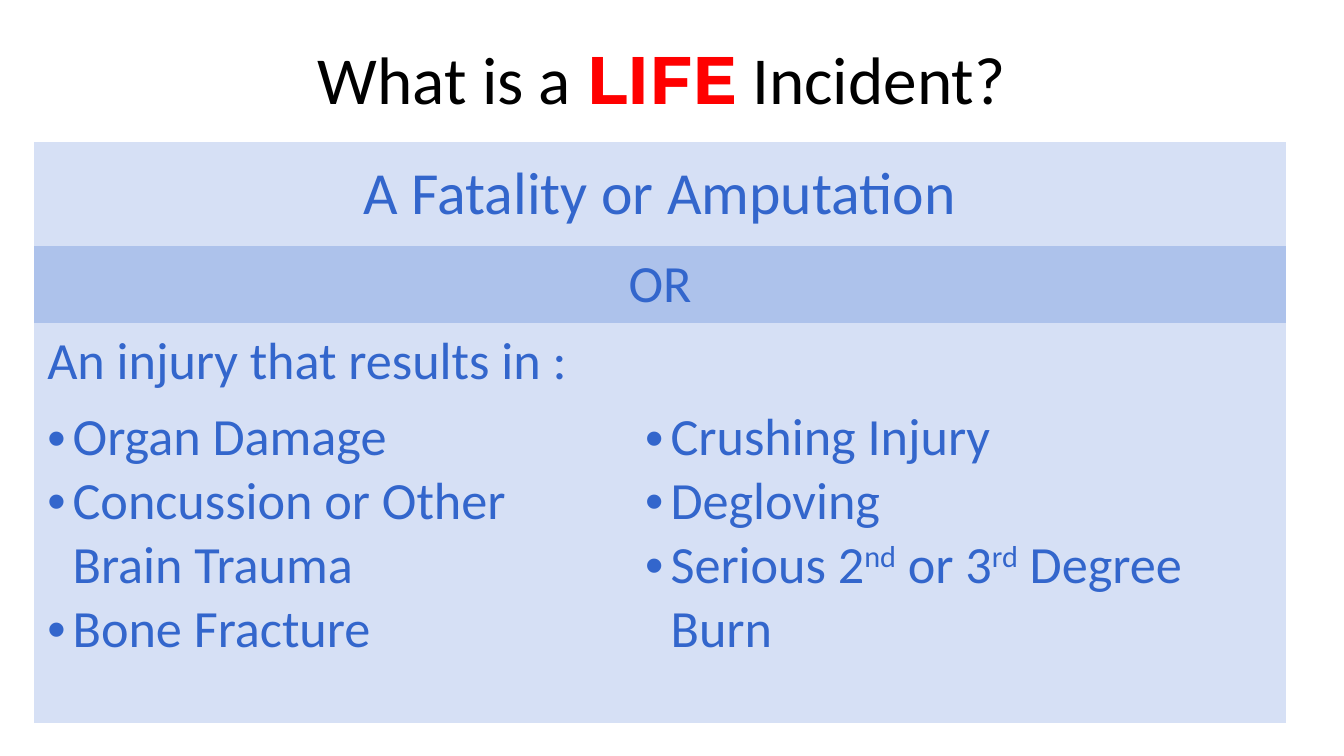
import pptx
import pptx.util
import pptx.dml.color
import pptx.enum.text
import pptx.oxml.ns
from lxml import etree

Cm = pptx.util.Cm
Pt = pptx.util.Pt
RGB = pptx.dml.color.RGBColor
Align = pptx.enum.text.PP_ALIGN
Anchor = pptx.enum.text.MSO_ANCHOR
qn = pptx.oxml.ns.qn

BLACK = RGB(0x00, 0x00, 0x00)
RED = RGB(0xFF, 0x00, 0x00)
BLUE = RGB(0x33, 0x66, 0xCC)
PALE = RGB(0xD6, 0xE0, 0xF5)
MID = RGB(0xAD, 0xC2, 0xEB)
PLAIN = "{2D5ABB26-0587-4C30-8999-92F81FD0307C}"

HEAD = {"name": "Calibri", "size": Pt(36), "bold": False}
LIFE = {"name": "Montserrat", "size": Pt(36), "bold": True}
BODY = {"name": "Calibri", "size": Pt(28), "bold": False}
LARGE = {"name": "Calibri", "size": Pt(32), "bold": False}

TITLE = [
    ("What is a ", HEAD, BLACK),
    ("LIFE", LIFE, RED),
    (" Incident?", HEAD, BLACK),
]
BANDS = [
    ("A Fatality or Amputation", LARGE, Align.CENTER, PALE),
    ("OR", BODY, Align.CENTER, MID),
    ("An injury that results in :", BODY, Align.LEFT, PALE),
]
LISTS = [
    [["Organ Damage"], ["Concussion or Other Brain Trauma"], ["Bone Fracture"]],
    [
        ["Crushing Injury"],
        ["Degloving"],
        ["Serious 2", "nd", " or 3", "rd", " Degree Burn"],
    ],
]
RAISED = {"nd", "rd"}
COLS = [11.3, 12.37]
ROWS = [1.96, 1.45, 1.45, 6.12]
INDENT = Cm(0.48)


def add_run(para, text, form, color):
    run = para.add_run()
    run.text = text
    for key, value in form.items():
        setattr(run.font, key, value)
    run.font.color.rgb = color
    if text in RAISED:
        run._r.get_or_add_rPr().set("baseline", "30000")


def add_dot(para):
    props = para._p.get_or_add_pPr()
    props.set("marL", str(INDENT))
    props.set("indent", str(-INDENT))
    etree.SubElement(props, qn("a:buFont")).set("typeface", "Arial")
    etree.SubElement(props, qn("a:buChar")).set("char", "•")


def paint(cell, color):
    cell.fill.solid()
    cell.fill.fore_color.rgb = color


deck = pptx.Presentation()
deck.slide_width, deck.slide_height = Cm(25.4), Cm(14.29)
slide = deck.slides.add_slide(deck.slide_layouts[6])

box = slide.shapes.add_textbox(Cm(4.65), Cm(0.58), Cm(16.08), Cm(1.8))
frame = box.text_frame
frame.word_wrap = True
frame.margin_left = Cm(1.36)
for part in TITLE:
    add_run(frame.paragraphs[0], *part)

table = slide.shapes.add_table(
    len(ROWS), len(COLS), Cm(0.64), Cm(2.69), Cm(sum(COLS)), Cm(sum(ROWS))
).table
table.first_row = table.horz_banding = False
table._tbl.tblPr.find(qn("a:tableStyleId")).text = PLAIN
for col, width in zip(table.columns, COLS):
    col.width = Cm(width)
for row, height in zip(table.rows, ROWS):
    row.height = Cm(height)

for num, (text, form, align, color) in enumerate(BANDS):
    cell = table.cell(num, 0)
    cell.merge(table.cell(num, 1))
    for each in (cell, table.cell(num, 1)):
        paint(each, color)
    para = cell.text_frame.paragraphs[0]
    para.alignment = align
    add_run(para, text, form, BLUE)
table.cell(0, 0).vertical_anchor = Anchor.MIDDLE

for num, items in enumerate(LISTS):
    cell = table.cell(len(BANDS), num)
    paint(cell, PALE)
    frame = cell.text_frame
    for pos, parts in enumerate(items):
        para = frame.add_paragraph() if pos else frame.paragraphs[0]
        add_dot(para)
        for text in parts:
            add_run(para, text, BODY, BLUE)

deck.save("out.pptx")
